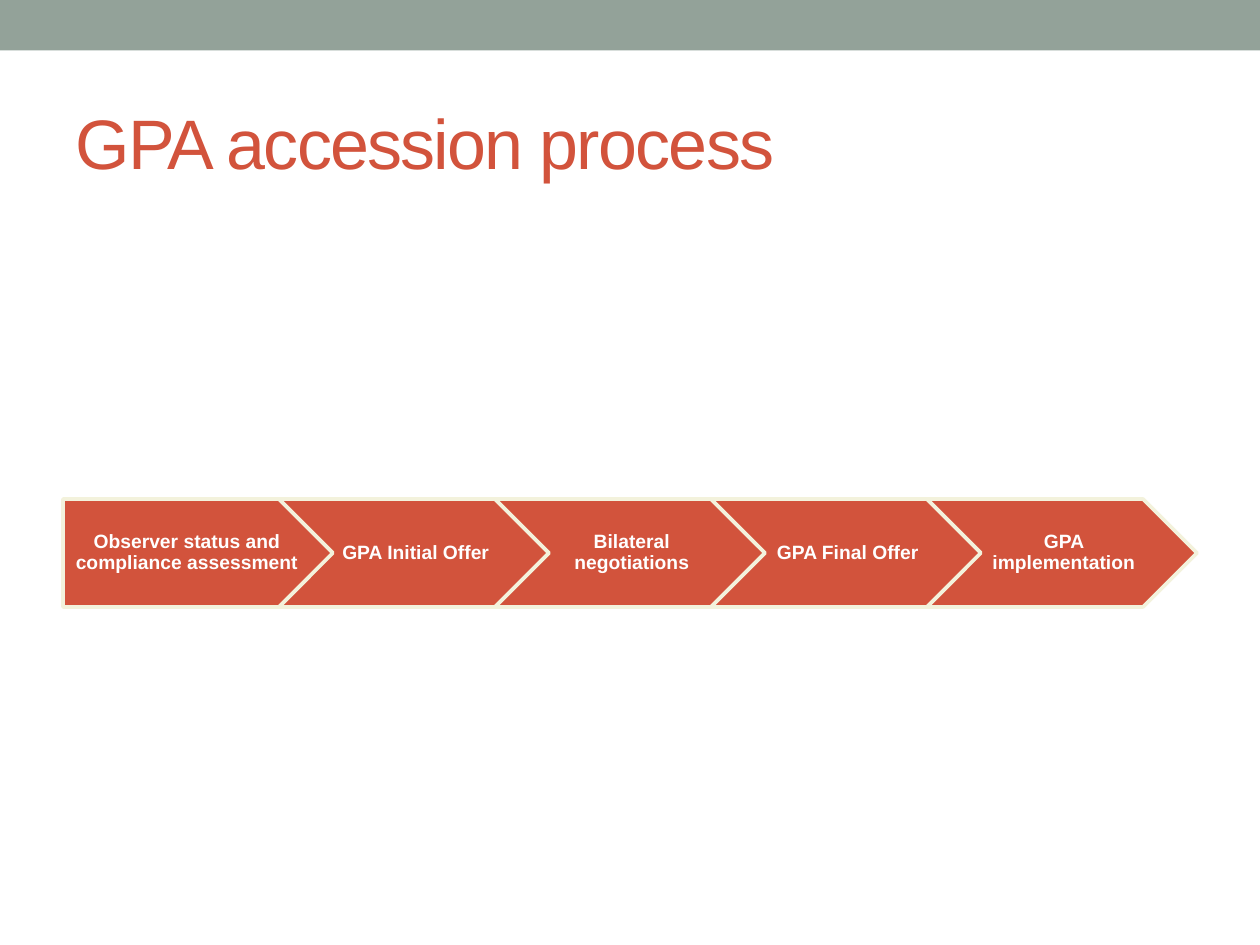
from pptx import Presentation
from pptx.dml.color import RGBColor
from pptx.enum.shapes import MSO_SHAPE
from pptx.enum.text import MSO_ANCHOR, PP_ALIGN
from pptx.util import Pt

RECT, PENTAGON, CHEVRON = MSO_SHAPE.RECTANGLE, MSO_SHAPE.PENTAGON, MSO_SHAPE.CHEVRON
MIDDLE = MSO_ANCHOR.MIDDLE
LEFT, CENTER = PP_ALIGN.LEFT, PP_ALIGN.CENTER

# Content
TITLE = "GPA accession process"
STEPS = [
    "Observer status and compliance assessment",
    "GPA Initial Offer",
    "Bilateral negotiations",
    "GPA Final Offer",
    "GPA implementation",
]

THEME = {
    "font": "Arial",
    "band": RGBColor.from_string("93A299"),
    "accent": RGBColor.from_string("D2533C"),
    "outline": RGBColor.from_string("F3F2DC"),
    "step_text": RGBColor.from_string("FFFFFF"),
    "title_size": Pt(40),
    "step_size": Pt(11),
}

# Layout, in points
SLIDE_W, SLIDE_H = 720, 540
MARGIN = 36
BAND_H = 28.8
STEP_MIDDLE = 316
PITCH = 0.8  # distance between steps, as a share of step width
STEP_W = (SLIDE_W - 2 * MARGIN) / (1 + PITCH * (len(STEPS) - 1))
STEP_H = 0.4 * STEP_W


def add_block(slide, kind, left, top, width, height, fill):
    sp = slide.shapes.add_shape(kind, Pt(left), Pt(top), Pt(width), Pt(height))
    sp.shadow.inherit = False
    sp.fill.solid()
    sp.fill.fore_color.rgb = fill
    sp.line.fill.background()
    return sp


def style_text(p, size, color, align, bold=False):
    p.alignment = align
    p.font.name = THEME["font"]
    p.font.size = size
    p.font.bold = bold
    p.font.color.rgb = color


def add_step(slide, index, text):
    kind = CHEVRON if index else PENTAGON
    sp = add_block(slide, kind, MARGIN + index * PITCH * STEP_W,
                   STEP_MIDDLE - STEP_H / 2, STEP_W, STEP_H, THEME["accent"])
    sp.line.color.rgb = THEME["outline"]
    sp.line.width = Pt(2.08)
    tf = sp.text_frame
    tf.word_wrap = True
    tf.vertical_anchor = MIDDLE
    tf.margin_left = Pt(3.6 if index else 4.3)
    tf.margin_right = Pt(1.5)
    tf.margin_top = tf.margin_bottom = Pt(2)
    p = tf.paragraphs[0]
    p.text = text
    p.line_spacing = 0.9
    style_text(p, THEME["step_size"], THEME["step_text"], CENTER, bold=True)


prs = Presentation()
prs.slide_width, prs.slide_height = Pt(SLIDE_W), Pt(SLIDE_H)
slide = prs.slides.add_slide(prs.slide_layouts[5])

# Top band
add_block(slide, RECT, 0, 0, SLIDE_W, BAND_H, THEME["band"])

# Title
title = slide.shapes.title
title.left, title.top = Pt(MARGIN), Pt(42)
title.width, title.height = Pt(SLIDE_W - 2 * MARGIN), Pt(78)
title.text_frame.vertical_anchor = MIDDLE
p = title.text_frame.paragraphs[0]
r = p.add_run()
r.text = TITLE
r._r.get_or_add_rPr().set("spc", "-100")  # tighten letters by 1 pt
style_text(p, THEME["title_size"], THEME["accent"], LEFT)

# Process steps
for index, text in enumerate(STEPS):
    add_step(slide, index, text)

prs.save("out.pptx")
